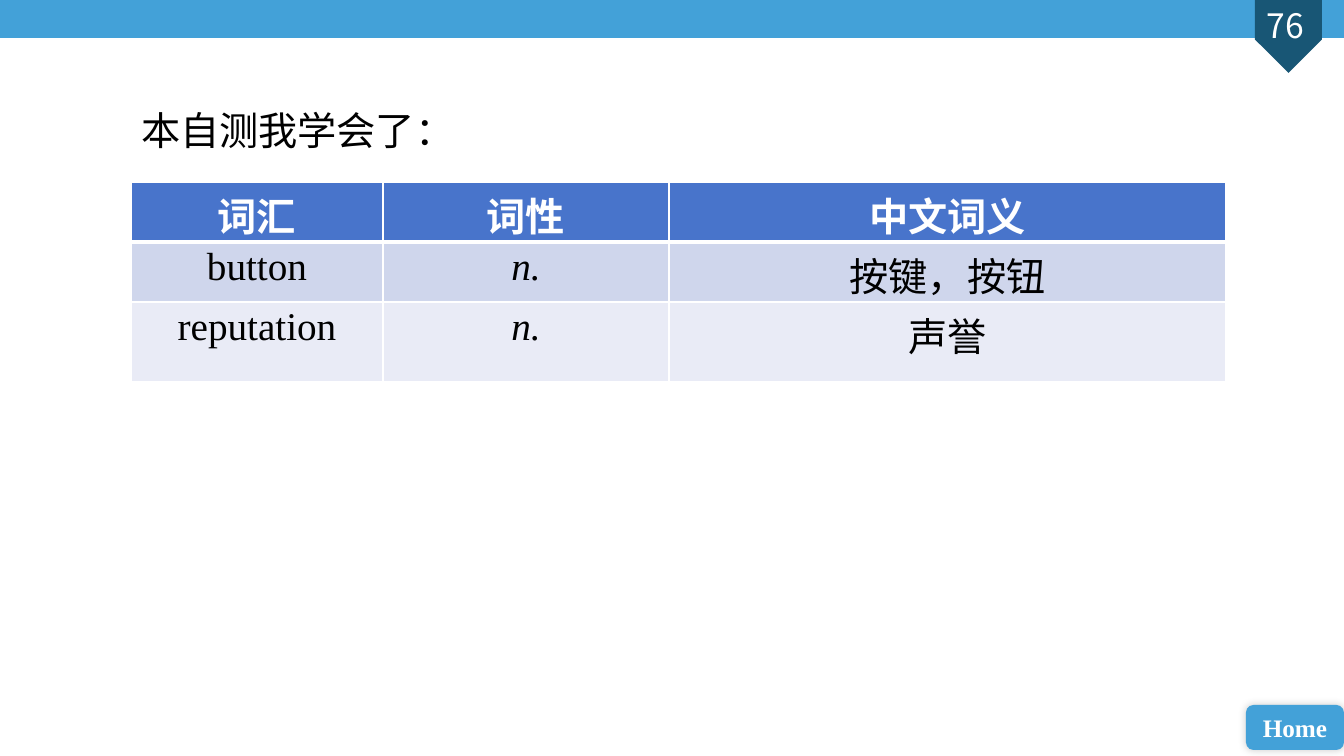
from lxml import etree
from pptx import Presentation, util as u
from pptx.dml.color import RGBColor
from pptx.enum import shapes, text
from pptx.oxml import parse_xml
from pptx.oxml.ns import nsdecls, qn

# Content
HEADING = "本自测我学会了："
PAGE_NUMBER = "76"
BUTTON_LABEL = "Home"
ROWS = [
    ("词汇", "词性", "中文词义"),
    ("button", "n.", "按键，按钮"),
    ("reputation", "n.", "声誉"),
]
COLUMN_WIDTHS = (252, 286, 557)
ROW_HEIGHTS = (60, 60, 80)
COLORS = {
    "bar": "43A1D8", "tab": "185675", "header": "4874CB", "odd": "CFD6EC",
    "even": "E9EBF6", "white": "FFFFFF", "black": "000000",
}
ROW_FILLS = ("header", "odd", "even")
PX = 914400 / 100.8


def px(length):
    return u.Emu(round(length * PX))


def color(name):
    return RGBColor.from_string(COLORS[name])


def box(left, top, width, height):
    return px(left), px(top), px(width), px(height)


def write(frame, words, size, font_name, ink, align=text.PP_ALIGN.CENTER, bold=False, italic=False):
    paragraph = frame.paragraphs[0]
    paragraph.text = words
    paragraph.alignment = align
    font = paragraph.font
    font.size, font.name, font.bold, font.italic = u.Pt(size), font_name, bold, italic
    font.color.rgb = color(ink)


def add_block(kind, place, fill):
    shape = slide.shapes.add_shape(kind, *box(*place))
    shape.shadow.inherit = False
    shape.fill.solid()
    shape.fill.fore_color.rgb = color(fill)
    shape.line.fill.background()
    return shape


def add_border(cell, side, points):
    line = etree.SubElement(cell._tc.get_or_add_tcPr(), qn(f"a:{side}"), w=str(u.Pt(points)))
    fill = etree.SubElement(line, qn("a:solidFill"))
    etree.SubElement(fill, qn("a:srgbClr"), val=COLORS["white"])


presentation = Presentation()
presentation.slide_width, presentation.slide_height = px(1344), px(756)
slide = presentation.slides.add_slide(presentation.slide_layouts[5])

# Top bar and page number tab
add_block(shapes.MSO_SHAPE.RECTANGLE, (0, 0, 1344, 38), "bar")
tab = add_block(shapes.MSO_SHAPE.PENTAGON, (1252, 3, 73, 67), "tab")
tab.rotation = 90
number = slide.shapes.add_textbox(*box(1236, 0, 99, 50))
number.text_frame.word_wrap = True
write(number.text_frame, PAGE_NUMBER, 24, "Noto Sans CJK SC", "white")

# Home button with a soft shadow
button = add_block(shapes.MSO_SHAPE.ROUNDED_RECTANGLE, (1246, 705, 98, 45), "bar")
button.text_frame.vertical_anchor = text.MSO_ANCHOR.MIDDLE
write(button.text_frame, BUTTON_LABEL, 18, "Times New Roman", "white", bold=True)
button._element.spPr.find(qn("a:effectLst")).append(parse_xml(
    f'<a:outerShdw {nsdecls("a")} blurRad="{u.Pt(6)}" dist="0" dir="18900000">'
    f'<a:srgbClr val="{COLORS["black"]}"><a:alpha val="20000"/></a:srgbClr></a:outerShdw>'))

# Vocabulary table
table = slide.shapes.add_table(
    len(ROWS), len(COLUMN_WIDTHS),
    *box(131, 182, sum(COLUMN_WIDTHS), sum(ROW_HEIGHTS))).table
for column, width in zip(table.columns, COLUMN_WIDTHS):
    column.width = px(width)
for r, (words, height, fill) in enumerate(zip(ROWS, ROW_HEIGHTS, ROW_FILLS)):
    table.rows[r].height = px(height)
    for c, word in enumerate(words):
        cell = table.cell(r, c)
        cell.margin_top, cell.margin_bottom = px(4), 0
        header = r == 0
        write(cell.text_frame, word, 28, "Times New Roman", "white" if header else "black",
              bold=header, italic=word == "n.")
        for side in ("lnL", "lnR", "lnT", "lnB"):
            thick = (r, side) in ((0, "lnB"), (1, "lnT"))
            add_border(cell, side, 3 if thick else 1)
        cell.fill.solid()
        cell.fill.fore_color.rgb = color(fill)

# Heading
title = slide.shapes.title
title.left, title.top, title.width, title.height = box(131, 101, 390, 57)
title.text_frame.vertical_anchor = text.MSO_ANCHOR.TOP
title.text_frame.auto_size = text.MSO_AUTO_SIZE.NONE
write(title.text_frame, HEADING, 28, "Calibri", "black", align=text.PP_ALIGN.LEFT)

presentation.save("out.pptx")
